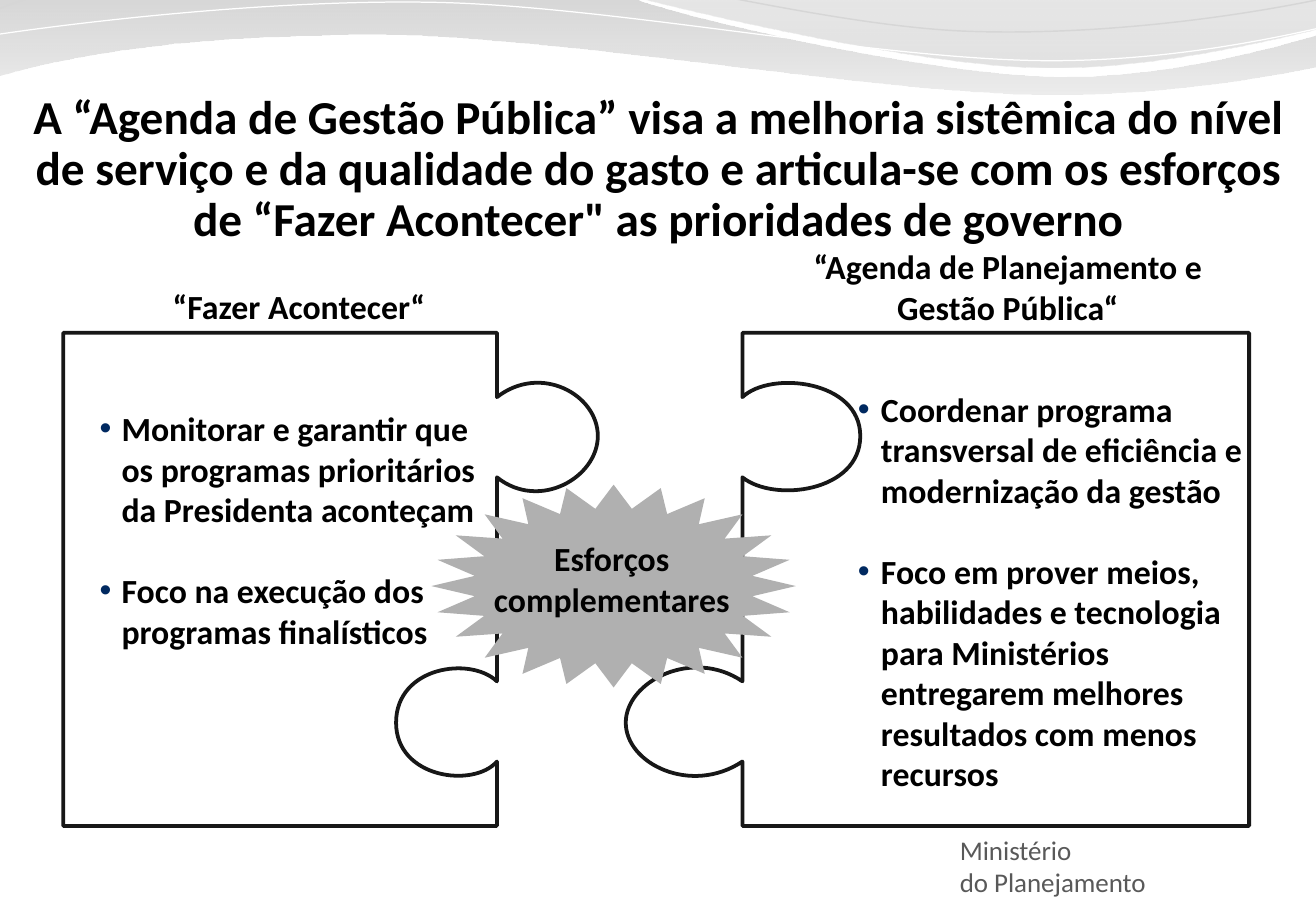
from lxml import etree
from pptx import Presentation, util as u
from pptx.dml.color import RGBColor
from pptx.enum import shapes as es, text as et
from pptx.oxml.ns import qn

PX = 9144  # one px is a hundredth of an inch

BLACK = RGBColor(0, 0, 0)
WHITE = RGBColor(255, 255, 255)
INK = RGBColor(0x17, 0x17, 0x17)
GREY = RGBColor(0x59, 0x59, 0x59)
STAR = RGBColor(0xB0, 0xB0, 0xB0)
NAVY = "002960"
HAIR = RGBColor(0xD6, 0xD6, 0xD6)
DARK = RGBColor(0xA3, 0xA3, 0xA3)
PALE = RGBColor(0xDD, 0xDD, 0xDD)
MID = RGBColor(0xB4, 0xB4, 0xB4)
SOFT = RGBColor(0xC3, 0xC3, 0xC3)

BOLD = {"name": "Calibri", "size": u.Pt(20), "bold": True}
HEAD = {**BOLD, "size": u.Pt(28)}
FOOT = {"name": "Calibri", "size": u.Pt(16)}
CENTRE = {"alignment": et.PP_ALIGN.CENTER}
FLUSH = {"margin_left": 0, "margin_right": 0, "margin_top": 0, "margin_bottom": 0}

# Outlines: a start point, then lines (x, y) and curves (two controls, end)
WAVES = [
    ([(-39, -11), (494, -11), (536, 9, 763, 63, 878, 63),
      (993, 63, 1120, 19, 1170, 0), (1171, 10, 1171, 21, 1171, 32),
      (1150, 41, 1013, 78, 863, 78), (713, 77, 423, 22, 272, 29),
      (117, 31, 20, 53, -40, 75), (-40, 30, -39, 33, -39, -11)],
     [(0, DARK, 45), (1, PALE, 55)]),
    ([(488, -12), (525, 0, 742, 52, 851, 55), (960, 59, 1093, 21, 1141, 10),
      (1141, -11), (488, -12)],
     [(0, MID, 30), (0.8, SOFT, 45)]),
]
STROKES = [
    ([(-5, 9), (50, -14, 186, -48, 321, -45), (455, -42, 662, 22, 802, 26),
      (943, 30, 1095, 2, 1163, -20)], HAIR, 0.85),
    ([(-25, 32), (28, 23, 209, -1, 358, 2), (508, 5, 731, 51, 870, 50),
      (1009, 49, 1126, 13, 1193, -4)], WHITE, 0.75),
]
PIECES = [
    [(52, 274), (409, 274), (409, 274, 409, 300, 409, 327),
     (445, 299, 492, 325, 492, 359), (492, 393, 444, 421, 409, 393),
     (409, 477, 409, 561, 409, 561), (387, 540, 326, 549, 326, 595),
     (326, 641, 390, 649, 409, 627), (409, 654, 409, 680, 409, 680),
     (52, 680), (52, 477), (52, 274)],
    [(1028, 680), (611, 680), (611, 680, 611, 654, 611, 627),
     (569, 655, 515, 629, 515, 595), (515, 561, 570, 533, 611, 561),
     (611, 477, 611, 393, 611, 393), (637, 414, 708, 405, 708, 359),
     (708, 313, 634, 305, 611, 327), (611, 300, 611, 274, 611, 274),
     (1028, 274), (1028, 477), (1028, 680)],
]
LABELS = [((50, 235, 392, 36), "“Fazer Acontecer“"),
          ((633, 202, 393, 69), "“Agenda de Planejamento e Gestão Pública“")]
LISTS = [
    ((50, 336, 345, 202), 50, 18,
     ["Monitorar e garantir que os programas prioritários da Presidenta aconteçam",
      "Foco na execução dos programas finalísticos"]),
    ((686, 320, 339, 337), 39, 19,
     ["Coordenar programa transversal de eficiência e modernização da gestão",
      "Foco em prover meios, habilidades e tecnologia para Ministérios "
      "entregarem melhores resultados com menos recursos"]),
]
TITLE = ("A “Agenda de Gestão Pública” visa a melhoria sistêmica do nível de "
         "serviço e da qualidade do gasto e articula-se com os esforços de "
         "“Fazer Acontecer\" as prioridades de governo")


def assign(item, values):
    for key, value in values.items():
        setattr(item, key, value)


def scale(box):
    return [n * PX for n in box]


def place(shape, box):
    assign(shape, dict(zip(("left", "top", "width", "height"), scale(box))))


def bend(line, part, left, top):
    """Swap a straight segment for a cubic curve."""
    curve = etree.Element(qn("a:cubicBezTo"))
    for x, y in zip(part[::2], part[1::2]):
        etree.SubElement(curve, qn("a:pt"), x=str(x * PX - left),
                         y=str(y * PX - top))
    line.getparent().replace(line, curve)


def draw(slide, route, close=True):
    first, *rest = [scale(part[-2:]) for part in route]
    pen = slide.shapes.build_freeform(*first)
    pen.add_line_segments(rest, close=close)
    shape = pen.convert_to_shape()
    shape.shadow.inherit = False
    lines = list(shape.element.iter(qn("a:lnTo")))
    for line, part in zip(lines, route[1:]):
        if len(part) == 6:
            bend(line, part, shape.left, shape.top)
    return shape


def paint(shape, colour):
    shape.fill.solid()
    shape.fill.fore_color.rgb = colour


def stroke(shape, colour, width):
    shape.line.color.rgb = colour
    shape.line.width = u.Pt(width)


def blend(shape, stops):
    shape.fill.gradient()
    shape.fill.gradient_angle = 270
    for stop, (spot, colour, _) in zip(shape.fill.gradient_stops, stops):
        stop.position = spot
        stop.color.rgb = colour
    for tone, stop in zip(shape.element.iter(qn("a:srgbClr")), stops):
        etree.SubElement(tone, qn("a:alpha"), val=str(stop[2] * 1000))


def write(shape, lines, font, colour=BLACK, para={}, frame={}):
    tf = shape.text_frame
    assign(tf, {"word_wrap": True, "auto_size": et.MSO_AUTO_SIZE.NONE,
                "vertical_anchor": et.MSO_ANCHOR.TOP, **frame})
    tf.text = "\n".join(lines)
    for p in tf.paragraphs:
        assign(p, {"space_before": u.Pt(0), **para})
        for run in p.runs:
            assign(run.font, font)
            run.font.color.rgb = colour


def bullet(p, left, hang):
    props = p._p.get_or_add_pPr()
    props.set("marL", str(left * PX))
    props.set("indent", str(-hang * PX))
    tint = etree.SubElement(props, qn("a:buClr"))
    etree.SubElement(tint, qn("a:srgbClr"), val=NAVY)
    etree.SubElement(props, qn("a:buFont"), typeface="Arial")
    etree.SubElement(props, qn("a:buChar"), char="•")


def lift(shape):
    shape.element.getparent().append(shape.element)


def preset(slide, kind, box, colour, adjust):
    shape = slide.shapes.add_shape(kind, *scale(box))
    shape.shadow.inherit = False
    paint(shape, colour)
    shape.line.fill.background()
    for i, value in enumerate(adjust):
        shape.adjustments[i] = value
    return shape


def label(slide, box, words):
    shape = preset(slide, es.MSO_SHAPE.LEFT_RIGHT_ARROW, box, WHITE, (1, 0))
    write(shape, [words], BOLD, para=CENTRE,
          frame={**FLUSH, "margin_bottom": 2 * PX,
                 "vertical_anchor": et.MSO_ANCHOR.BOTTOM})


def fill_list(shape, box, left, hang, items):
    place(shape, box)
    write(shape, items, BOLD, frame=FLUSH)
    for i, p in enumerate(shape.text_frame.paragraphs):
        bullet(p, left, hang)
        p.space_before = u.Pt(24 * i)
    lift(shape)


def main():
    prs = Presentation()
    prs.slide_width, prs.slide_height = scale((1083, 750))
    slide = prs.slides.add_slide(prs.slide_layouts[3])
    title, *bodies = slide.placeholders

    # Wave band
    for route, stops in WAVES:
        wave = draw(slide, route)
        blend(wave, stops)
        wave.line.fill.background()
    for route, colour, width in STROKES:
        curve = draw(slide, route, close=False)
        curve.fill.background()
        stroke(curve, colour, width)

    # Footer and title
    foot = slide.shapes.add_textbox(*scale((780, 681, 195, 64)))
    write(foot, ["Ministério", "do Planejamento"], FOOT, GREY)
    place(title, (0, 72, 1083, 137))
    write(title, [TITLE], HEAD, para={**CENTRE, "line_spacing": 0.9})
    lift(title)

    # Puzzle pieces with labels and lists
    for route in PIECES:
        piece = draw(slide, route)
        paint(piece, WHITE)
        stroke(piece, INK, 2.25)
    for box, words in LABELS:
        label(slide, box, words)
    for body, details in zip(bodies, LISTS):
        fill_list(body, *details)

    # Central star
    preset(slide, es.MSO_SHAPE.STAR_24_POINT, (355, 399, 300, 167), STAR, (0.384,))
    core = slide.shapes.add_textbox(*scale((370, 443, 267, 67)))
    write(core, ["Esforços", "complementares"], BOLD, para=CENTRE, frame=FLUSH)

    prs.save("out.pptx")


if __name__ == "__main__":
    main()
